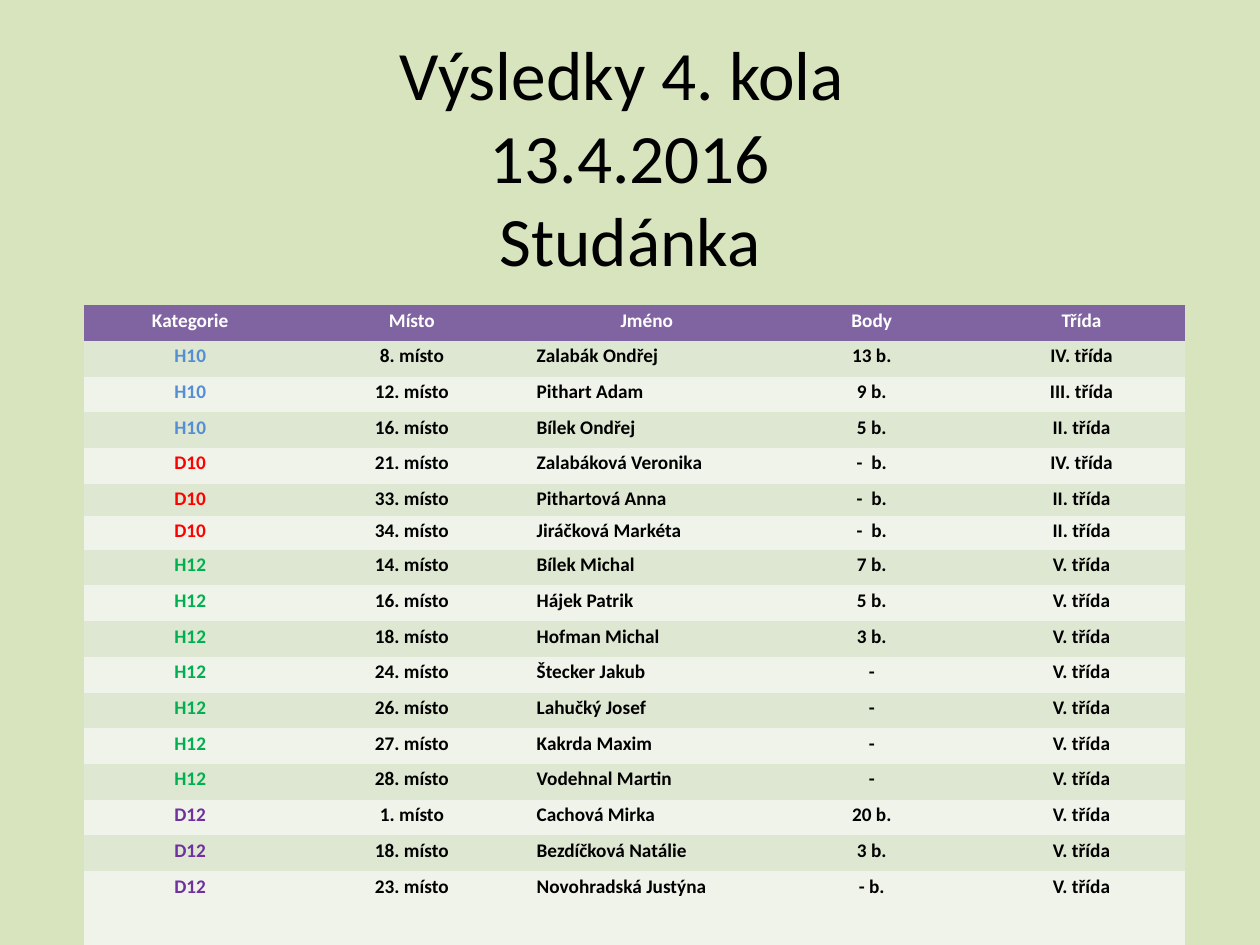
from pptx import Presentation
from pptx.dml.color import RGBColor
from pptx.enum.text import MSO_ANCHOR as Anchor, MSO_AUTO_SIZE as AutoSize, PP_ALIGN as Align
from pptx.util import Cm, Pt

# Content
TITLE = ["Výsledky 4. kola ", "13.4.2016", "Studánka"]
HEADER = ("Kategorie", "Místo", "Jméno", "Body", "Třída")
RESULTS = [
    ("H10", "8. místo", "Zalabák Ondřej", "13 b.", "IV. třída"),
    ("H10", "12. místo", "Pithart Adam", "9 b.", "III. třída"),
    ("H10", "16. místo", "Bílek Ondřej", "5 b.", "II. třída"),
    ("D10", "21. místo", "Zalabáková Veronika", "-  b.", "IV. třída"),
    ("D10", "33. místo", "Pithartová Anna", "-  b.", "II. třída"),
    ("D10", "34. místo", "Jiráčková Markéta", "-  b.", "II. třída"),
    ("H12", "14. místo", "Bílek Michal", "7 b.", "V. třída"),
    ("H12", "16. místo", "Hájek Patrik", "5 b.", "V. třída"),
    ("H12", "18. místo", "Hofman Michal", "3 b.", "V. třída"),
    ("H12", "24. místo", "Štecker Jakub", "-", "V. třída"),
    ("H12", "26. místo", "Lahučký Josef", "-", "V. třída"),
    ("H12", "27. místo", "Kakrda Maxim", "-", "V. třída"),
    ("H12", "28. místo", "Vodehnal Martin", "-", "V. třída"),
    ("D12", "1. místo", "Cachová Mirka", "20 b.", "V. třída"),
    ("D12", "18. místo", "Bezdíčková Natálie", "3 b.", "V. třída"),
    ("D12", "23. místo", "Novohradská Justýna", "- b.", "V. třída"),
]

THEME = {
    "font": "Calibri", "title_size": 39.6, "cell_size": 11,
    "background": "D7E4BD", "text": "000000",
    "header_fill": "8064A2", "header_text": "FFFFFF",
    "bands": ("DEE7D1", "EFF3EA"),
    "categories": {"H10": "558ED5", "D10": "FF0000", "H12": "00B050", "D12": "7030A0"},
}

# Layout in centimetres
TITLE_BOX = {"left": Cm(1.27), "top": Cm(0.76), "width": Cm(22.86), "height": Cm(4.75)}
TABLE_LEFT, TABLE_TOP = 1.7, 6.15
COLUMN_WIDTHS = (4.27, 4.67, 4.8, 4.27, 4.19)
ROW_HEIGHT = 0.72
SPECIAL_HEIGHTS = {5: 0.65, 6: 0.68, 16: 1.48}
NAME_COLUMN = 2
NO_STYLE = "{2D5ABB26-0587-4C30-8999-92F81FD0307C}"


def apply(target, values):
    for name, value in values.items():
        setattr(target, name, value)


def paint(fill, color):
    fill.solid()
    fill.fore_color.rgb = RGBColor.from_string(color)


def style_font(font, size, color, bold):
    apply(font, {"name": THEME["font"], "size": Pt(size), "bold": bold})
    font.color.rgb = RGBColor.from_string(color)


def add_title(page):
    box = page.shapes.title
    apply(box, TITLE_BOX)
    frame = box.text_frame
    apply(frame, {"word_wrap": True, "auto_size": AutoSize.NONE,
                  "vertical_anchor": Anchor.MIDDLE})
    para = frame.paragraphs[0]
    para.text = "\v".join(TITLE)
    para.alignment = Align.CENTER
    for span in para.runs:
        style_font(span.font, THEME["title_size"], THEME["text"], False)


def fill_cell(cell, text, fill, color, align):
    apply(cell, {"margin_left": Cm(0.18), "margin_right": Cm(0.18),
                 "margin_top": 0, "margin_bottom": 0})
    paint(cell.fill, fill)
    para = cell.text_frame.paragraphs[0]
    apply(para, {"text": text, "alignment": align, "line_spacing": 1.15})
    style_font(para.runs[0].font, THEME["cell_size"], color, True)


def add_results(page):
    rows = [HEADER] + RESULTS
    heights = [SPECIAL_HEIGHTS.get(index, ROW_HEIGHT) for index in range(len(rows))]
    table = page.shapes.add_table(
        len(rows), len(HEADER), Cm(TABLE_LEFT), Cm(TABLE_TOP),
        Cm(sum(COLUMN_WIDTHS)), Cm(sum(heights))).table
    # Drop the default style, which draws white borders
    table._tbl.tblPr.find("{*}tableStyleId").text = NO_STYLE
    for column, width in zip(table.columns, COLUMN_WIDTHS):
        column.width = Cm(width)
    for r, (row, values) in enumerate(zip(table.rows, rows)):
        row.height = Cm(heights[r])
        header = r == 0
        fill = THEME["header_fill"] if header else THEME["bands"][(r - 1) % 2]
        base = THEME["header_text"] if header else THEME["text"]
        for c, text in enumerate(values):
            color = THEME["categories"].get(text, base)
            left = c == NAME_COLUMN and not header
            fill_cell(table.cell(r, c), text, fill, color,
                      Align.LEFT if left else Align.CENTER)


def main():
    deck = Presentation()
    apply(deck, {"slide_width": Cm(25.4), "slide_height": Cm(19.05)})
    page = deck.slides.add_slide(deck.slide_layouts[5])
    paint(page.background.fill, THEME["background"])
    add_title(page)
    add_results(page)
    deck.save("out.pptx")


if __name__ == "__main__":
    main()
